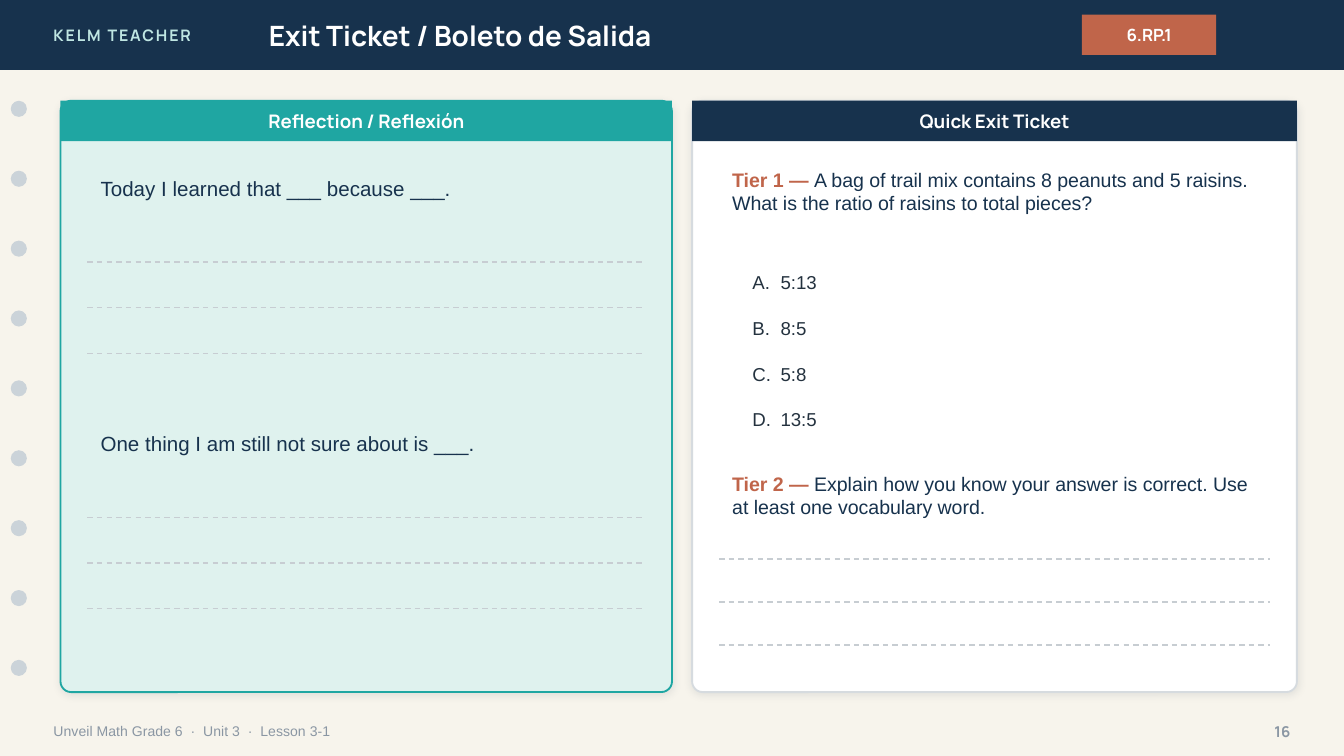
"""Build the bilingual exit ticket slide with a reflection panel and a quick quiz."""
from lxml.etree import SubElement
from pptx import Presentation
from pptx.dml.color import RGBColor
from pptx.enum.dml import MSO_LINE
from pptx.enum.shapes import MSO_CONNECTOR, MSO_SHAPE
from pptx.enum.text import MSO_ANCHOR, MSO_AUTO_SIZE, PP_ALIGN
from pptx.oxml import parse_xml
from pptx.oxml.ns import nsdecls, qn
from pptx.util import Pt

PX = 4572
NAVY = RGBColor(0x17, 0x32, 0x4D)
TEAL = RGBColor(0x1F, 0xA6, 0xA2)
MINT = RGBColor(0xDF, 0xF2, 0xEE)
PALE_TEAL = RGBColor(0xBF, 0xE6, 0xE2)
RUST = RGBColor(0xC0, 0x65, 0x4A)
CREAM = RGBColor(0xF7, 0xF4, 0xEC)
WHITE = RGBColor(0xFF, 0xFF, 0xFF)
INK = RGBColor(0x24, 0x32, 0x3F)
MUTED = RGBColor(0x8A, 0x96, 0xA3)
HOLE = RGBColor(0xCB, 0xD3, 0xD9)
RULE = RGBColor(0xC7, 0xCD, 0xD2)
BORDER = RGBColor(0xD6, 0xDB, 0xDF)
HEADING_FONT = "Manrope"
BODY_FONT = "Arial"
SHADOW = (
    f'<a:effectLst {nsdecls("a")}><a:outerShdw blurRad="50800" dist="12700" dir="5400000">'
    '<a:srgbClr val="1C2E42"><a:alpha val="10000"/></a:srgbClr></a:outerShdw></a:effectLst>'
)

presentation = Presentation()
presentation.slide_width = 2000 * PX
presentation.slide_height = 1125 * PX
slide = presentation.slides.add_slide(presentation.slide_layouts[5])
slide.background.fill.solid()
slide.background.fill.fore_color.rgb = CREAM
shapes = slide.shapes


def add_block(kind, left, top, width, height, fill):
    """Add a filled shape without outline or shadow."""
    shape = shapes.add_shape(kind, left * PX, top * PX, width * PX, height * PX)
    shape.shadow.inherit = False
    shape.fill.solid()
    shape.fill.fore_color.rgb = fill
    shape.line.fill.background()
    return shape


def write(shape, text, size, color, font=BODY_FONT, bold=False, align=PP_ALIGN.LEFT):
    """Put one vertically centred paragraph into a shape."""
    frame = shape.text_frame
    frame.word_wrap = True
    frame.auto_size = MSO_AUTO_SIZE.NONE
    frame.vertical_anchor = MSO_ANCHOR.MIDDLE
    paragraph = frame.paragraphs[0]
    paragraph.text = text
    paragraph.alignment = align
    if "\t" in text:
        tabs = SubElement(paragraph._p.get_or_add_pPr(), qn("a:tabLst"))
        SubElement(tabs, qn("a:tab"), pos=str(42 * PX), algn="l")
    paragraph.font.name = font
    paragraph.font.size = Pt(size)
    paragraph.font.bold = bold
    paragraph.font.color.rgb = color
    return paragraph


add_block(MSO_SHAPE.RECTANGLE, 0, 0, 2000, 104, NAVY)

brand = shapes.add_textbox(60 * PX, 0, 480 * PX, 104 * PX)
brand_paragraph = write(brand, "KELM TEACHER", 8.5, PALE_TEAL, HEADING_FONT, True)
brand_paragraph.runs[0]._r.get_or_add_rPr().set("spc", "100")

title = shapes.title
shapes._spTree.append(title._element)
title.left, title.top, title.width, title.height = 380 * PX, 0, 1120 * PX, 104 * PX
write(title, "Exit Ticket / Boleto de Salida", 15, WHITE, HEADING_FONT, True)

badge = add_block(MSO_SHAPE.RECTANGLE, 1610, 22, 200, 60, RUST)
write(badge, "6.RP.1", 9, WHITE, HEADING_FONT, True, PP_ALIGN.CENTER)

for index in range(9):
    add_block(MSO_SHAPE.OVAL, 16, 150 + 104 * index, 24, 24, HOLE)

footer = shapes.add_textbox(60 * PX, 1060 * PX, 1400 * PX, 56 * PX)
write(footer, "Unveil Math Grade 6  ·  Unit 3  ·  Lesson 3-1", 7.5, MUTED)
page_number = shapes.add_textbox(1840 * PX, 1060 * PX, 100 * PX, 56 * PX)
write(page_number, "16", 8, MUTED, HEADING_FONT, True, PP_ALIGN.RIGHT)

for left, width, fill, border, header_fill, heading in (
    (90, 910, MINT, TEAL, TEAL, "Reflection / Reflexión"),
    (1030, 900, WHITE, BORDER, NAVY, "Quick Exit Ticket"),
):
    panel = add_block(MSO_SHAPE.ROUNDED_RECTANGLE, left, 150, width, 880, fill)
    panel.adjustments[0] = 0.018
    panel.line.color.rgb = border
    panel.line.width = Pt(1)
    properties = panel._element.spPr
    properties.replace(properties.find(qn("a:effectLst")), parse_xml(SHADOW))
    header = add_block(MSO_SHAPE.RECTANGLE, left, 150, width, 60, header_fill)
    write(header, heading, 10, WHITE, HEADING_FONT, True, PP_ALIGN.CENTER)

for top, prompt in (
    (240, "Today I learned that ___ because ___."),
    (620, "One thing I am still not sure about is ___."),
):
    prompt_box = shapes.add_textbox(130 * PX, top * PX, 830 * PX, 80 * PX)
    write(prompt_box, prompt, 11, NAVY)

for top, height, label, question in (
    (240, 140, "Tier 1 — ", "A bag of trail mix contains 8 peanuts and 5 raisins. "
     "What is the ratio of raisins to total pieces?"),
    (692, 110, "Tier 2 — ", "Explain how you know your answer is correct. "
     "Use at least one vocabulary word."),
):
    question_box = shapes.add_textbox(1070 * PX, top * PX, 820 * PX, height * PX)
    paragraph = write(question_box, label, 10.5, NAVY)
    question_box.text_frame.vertical_anchor = MSO_ANCHOR.TOP
    paragraph.runs[0].font.bold = True
    paragraph.runs[0].font.color.rgb = RUST
    paragraph.add_run().text = question

for index, choice in enumerate(("A.\t5:13", "B.\t8:5", "C.\t5:8", "D.\t13:5")):
    choice_box = shapes.add_textbox(1100 * PX, (390 + 68 * index) * PX, 780 * PX, 60 * PX)
    write(choice_box, choice, 10, INK)

for left, right, top, gap in ((130, 960, 390, 68), (130, 960, 770, 68), (1070, 1890, 832, 64)):
    for index in range(3):
        y = (top + gap * index) * PX
        rule = shapes.add_connector(MSO_CONNECTOR.STRAIGHT, left * PX, y, right * PX, y)
        rule.line.color.rgb = RULE
        rule.line.width = Pt(0.75)
        rule.line.dash_style = MSO_LINE.DASH
        SubElement(rule._element.spPr, qn("a:effectLst"))

presentation.save("out.pptx")
